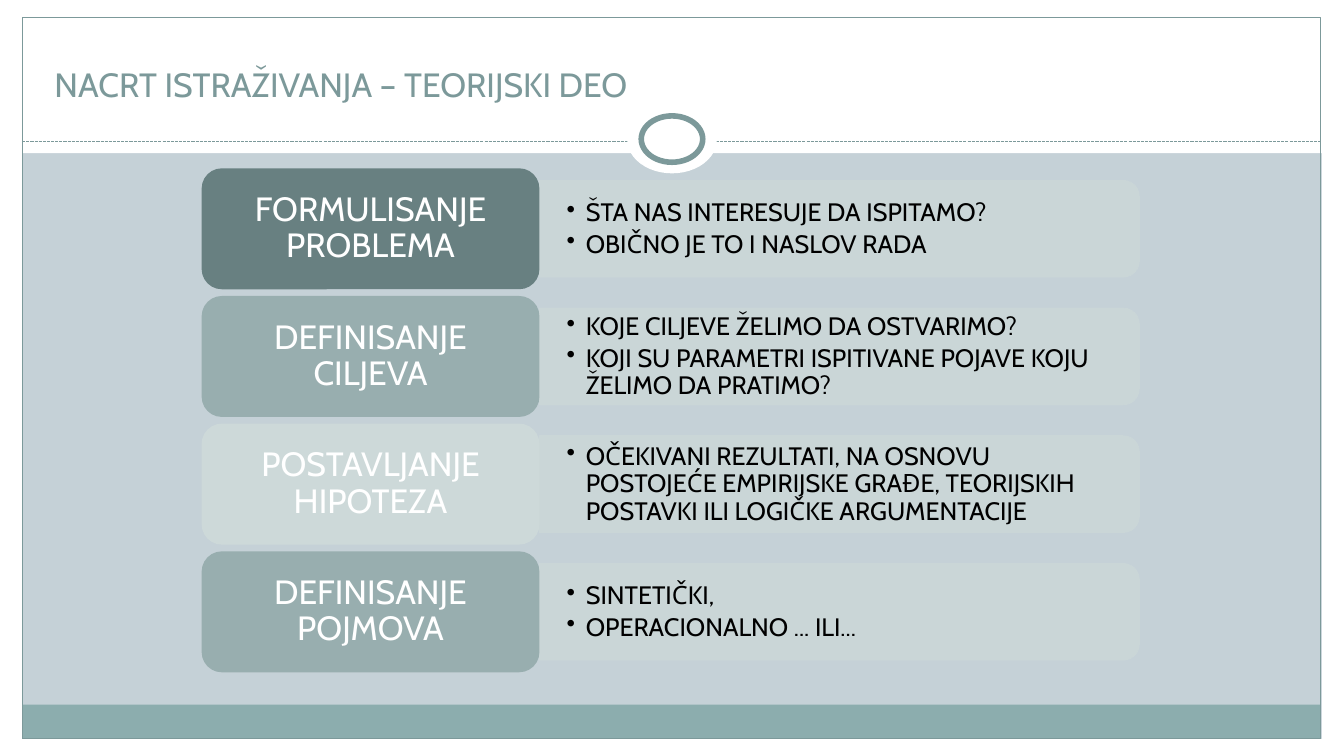
from pptx import Presentation
from pptx.dml.color import RGBColor
from pptx.enum import dml, shapes, text
from pptx.oxml import ns, xmlchemy
from pptx.util import Inches, Pt

TITLE = "NACRT ISTRAŽIVANJA – TEORIJSKI DEO"
WHITE = RGBColor(0xFF, 0xFF, 0xFF)
BLACK = RGBColor(0, 0, 0)
BACK = RGBColor(0xC5, 0xD1, 0xD7)
TEAL = RGBColor(0x7C, 0x99, 0x9A)
BAND = RGBColor(0x8C, 0xAD, 0xAE)
PANEL = RGBColor(0xCB, 0xD7, 0xD7)
DARK = RGBColor(0x68, 0x80, 0x81)
MID = RGBColor(0x98, 0xAE, 0xAF)
PALE = RGBColor(0xCD, 0xD9, 0xD9)
STEPS = [
    ("FORMULISANJE PROBLEMA", DARK,
     ["ŠTA NAS INTERESUJE DA ISPITAMO?", "OBIČNO JE TO I NASLOV RADA"]),
    ("DEFINISANJE CILJEVA", MID,
     ["KOJE CILJEVE ŽELIMO DA OSTVARIMO?",
      "KOJI SU PARAMETRI ISPITIVANE POJAVE KOJU ŽELIMO DA PRATIMO?"]),
    ("POSTAVLJANJE HIPOTEZA", PALE,
     ["OČEKIVANI REZULTATI, NA OSNOVU POSTOJEĆE EMPIRIJSKE GRAĐE, "
      "TEORIJSKIH POSTAVKI ILI LOGIČKE ARGUMENTACIJE"]),
    ("DEFINISANJE POJMOVA", MID, ["SINTETIČKI,", "OPERACIONALNO ... ILI..."]),
]
KIND = shapes.MSO_SHAPE
FRAME = [
    (KIND.RECTANGLE, (0, 7.33, 13.33, 0.17), WHITE, 0),
    (KIND.RECTANGLE, (0, 0, 13.33, 1.52), WHITE, 0),
    (KIND.RECTANGLE, (0, 0, 0.22, 7.5), WHITE, 0),
    (KIND.RECTANGLE, (13.11, 0, 0.22, 7.5), WHITE, 0),
    (KIND.RECTANGLE, (0.22, 6.99, 12.88, 0.34), BAND, 0),
    (KIND.RECTANGLE, (0.22, 0.17, 12.88, 7.16), None, 0.75),
]
RINGS = [
    (KIND.OVAL, (6.22, 1.05, 0.89, 0.67), WHITE, 0),
    (KIND.OVAL, (6.36, 1.15, 0.61, 0.46), WHITE, 4),
]
LEFT, TOP, WIDE, HIGH = 2, 1.67, 3.35, 1.2
PITCH = 3.8 / 3
LONG, THICK = 5.95, 0.96


def add_part(slide, kind, box, fill, line=0, ink=TEAL):
    """Add a flat preset shape."""
    part = slide.shapes.add_shape(kind, *map(Inches, box))
    part.shadow.inherit = False
    if fill is None:
        part.fill.background()
    else:
        part.fill.solid()
        part.fill.fore_color.rgb = fill
    if line:
        part.line.color.rgb = ink
        part.line.width = Pt(line)
    else:
        part.line.fill.background()
    return part


def set_frame(shape, pad, anchor):
    """Set wrapping, insets and anchor; return the text frame."""
    frame = shape.text_frame
    frame.word_wrap = True
    frame.auto_size = text.MSO_AUTO_SIZE.NONE
    frame.vertical_anchor = anchor
    frame.margin_left = frame.margin_right = Inches(pad[0])
    frame.margin_top = frame.margin_bottom = Inches(pad[1])
    return frame


def add_run(para, words, size, color):
    """Add one styled run."""
    run = para.add_run()
    run.text = words
    run.font.name = "Cabin"
    run.font.size = Pt(size)
    run.font.color.rgb = color


def add_node(parent, tag, **attrs):
    """Append a drawing element."""
    node = xmlchemy.OxmlElement(tag)
    for key, value in attrs.items():
        node.set(key, value)
    parent.append(node)


def add_step(slide, row, label, fill, points):
    """Add a panel, its bullet points and its label."""
    top = TOP + row * PITCH
    side = LEFT + WIDE
    mid = top + HIGH / 2
    panel = add_part(slide, KIND.ROUND_2_SAME_RECTANGLE,
                     (side + LONG / 2 - THICK / 2, mid - LONG / 2, THICK, LONG),
                     PANEL, 0.75, PANEL)
    panel.rotation = 90
    for color in panel._element.spPr.iter(ns.qn("a:srgbClr")):
        add_node(color, "a:alpha", val="90000")

    body = slide.shapes.add_textbox(Inches(side), Inches(mid - 0.43),
                                    Inches(5.91), Inches(0.87))
    frame = set_frame(body, (0.27, 0.14), text.MSO_ANCHOR.MIDDLE)
    for i, point in enumerate(points):
        para = frame.add_paragraph() if i else frame.paragraphs[0]
        para.line_spacing = 0.9
        para.space_after = Pt(3)
        props = para._p.get_or_add_pPr()
        props.set("marL", str(Inches(0.19)))
        props.set("indent", str(-Inches(0.19)))
        add_node(props, "a:buChar", char="•")
        add_run(para, point, 18, BLACK)

    card = add_part(slide, KIND.ROUNDED_RECTANGLE, (LEFT, top, WIDE, HIGH), fill)
    para = set_frame(card, (0.16, 0.11), text.MSO_ANCHOR.MIDDLE).paragraphs[0]
    para.alignment = text.PP_ALIGN.CENTER
    para.line_spacing = 0.9
    add_run(para, label, 24, WHITE)


def main():
    """Build the slide."""
    deck = Presentation()
    deck.slide_width, deck.slide_height = Inches(13.33), Inches(7.5)
    slide = deck.slides.add_slide(deck.slide_layouts[5])
    slide.background.fill.solid()
    slide.background.fill.fore_color.rgb = BACK
    for part in FRAME:
        add_part(slide, *part)
    rule = slide.shapes.add_connector(shapes.MSO_CONNECTOR.STRAIGHT, Inches(0.22),
                                      Inches(1.4), Inches(13.1), Inches(1.4))
    rule.line.color.rgb = TEAL
    rule.line.width = Pt(0.75)
    rule.line.dash_style = dml.MSO_LINE.SQUARE_DOT
    add_node(rule._element.spPr, "a:effectLst")
    for part in RINGS:
        add_part(slide, *part)

    title = slide.shapes.title
    title._element.getparent().append(title._element)
    title.left, title.top = Inches(0.44), Inches(0.25)
    title.width, title.height = Inches(12.44), Inches(0.83)
    para = set_frame(title, (0.1, 0.05), text.MSO_ANCHOR.BOTTOM).paragraphs[0]
    para.alignment = text.PP_ALIGN.LEFT
    add_run(para, TITLE, 24, TEAL)
    for row, step in enumerate(STEPS):
        add_step(slide, row, *step)
    deck.save("out.pptx")


if __name__ == "__main__":
    main()
